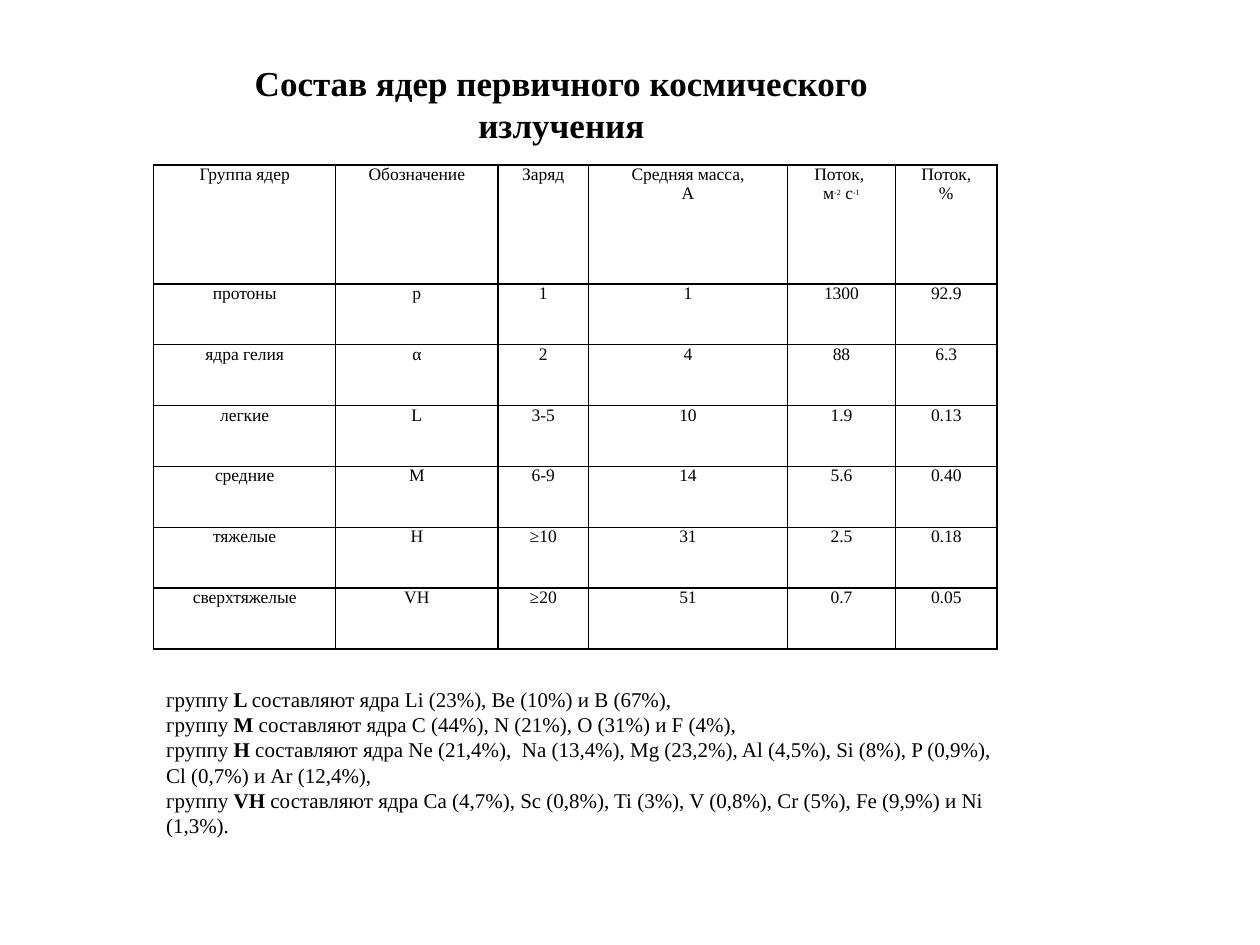
from lxml.etree import SubElement
from pptx import Presentation
from pptx.dml.color import RGBColor
from pptx.enum.text import MSO_ANCHOR, MSO_AUTO_SIZE, PP_ALIGN
from pptx.oxml.ns import qn
from pptx.util import Pt

FONT = "Times New Roman"
BLACK = "000000"

TITLE = "Состав ядер первичного космического излучения"
HEADERS = ["Группа ядер", "Обозначение", "Заряд", "Средняя масса,\nA",
           "Поток, \nм^-2^ с^-1", "Поток,\n%"]
NUCLEI = [
    ["протоны", "p", "1", "1", "1300", "92.9"],
    ["ядра гелия", "α", "2", "4", "88", "6.3"],
    ["легкие", "L", "3-5", "10", "1.9", "0.13"],
    ["средние", "M", "6-9", "14", "5.6", "0.40"],
    ["тяжелые", "H", "≥10", "31", "2.5", "0.18"],
    ["сверхтяжелые", "VH", "≥20", "51", "0.7", "0.05"],
]
GROUPS = [
    ("группу ", "L ", "составляют ядра Li (23%), Be (10%) и B (67%),"),
    ("группу ", "M ", "составляют ядра C (44%), N (21%), O (31%) и F (4%),"),
    ("группу ", "H", " составляют ядра Ne (21,4%),  Na (13,4%), Mg (23,2%), Al (4,5%), "
     "Si (8%), P (0,9%), Cl (0,7%) и Ar (12,4%),"),
    ("группу ", "VH ", "составляют ядра Ca (4,7%), Sc (0,8%), Ti (3%), V (0,8%), "
     "Cr (5%), Fe (9,9%) и Ni (1,3%)."),
]

LEFT = 87.84
TABLE_TOP = 94.32
COLUMN_WIDTHS = [103.9, 92.9, 51.6, 113.8, 61.7, 58.1]
HEADER_HEIGHT, ROW_HEIGHT = 67.9, 34.8


def color(hex_value):
    return RGBColor.from_string(hex_value)


def style(font, size, bold=False):
    font.name = FONT
    font.size = Pt(size)
    font.bold = bold
    font.color.rgb = color(BLACK)


def add_text(slide, left, top, width, height):
    frame = slide.shapes.add_textbox(Pt(left), Pt(top), Pt(width), Pt(height)).text_frame
    frame.word_wrap = True
    frame.auto_size = MSO_AUTO_SIZE.SHAPE_TO_FIT_TEXT
    return frame


def add_borders(cell):
    properties = cell._tc.get_or_add_tcPr()
    for index, side in enumerate(("lnL", "lnR", "lnT", "lnB")):
        line = properties.makeelement(qn(f"a:{side}"), {"w": str(Pt(1))})
        fill = SubElement(line, qn("a:solidFill"))
        SubElement(fill, qn("a:srgbClr"), val=BLACK)
        properties.insert(index, line)


def fill_cell(cell, content):
    cell.fill.background()
    cell.margin_left = cell.margin_right = Pt(5)
    cell.margin_top = cell.margin_bottom = 0
    cell.vertical_anchor = MSO_ANCHOR.TOP
    cell.text_frame.text = content.replace("^", "")
    for paragraph, text in zip(cell.text_frame.paragraphs, content.split("\n")):
        paragraph.alignment = PP_ALIGN.CENTER
        pieces = text.split("^")
        paragraph.runs[0].text = pieces[0]
        for piece in pieces[1:]:
            paragraph.add_run().text = piece
        for index, run in enumerate(paragraph.runs):
            raised = index % 2 == 1
            style(run.font, 8 if raised else 10)
            if raised:
                run._r.get_or_add_rPr().set("baseline", "30000")
    add_borders(cell)


def add_nuclei_table(slide):
    rows = [HEADERS] + NUCLEI
    heights = [HEADER_HEIGHT] + [ROW_HEIGHT] * len(NUCLEI)
    table = slide.shapes.add_table(
        len(rows), len(HEADERS), Pt(LEFT), Pt(TABLE_TOP),
        Pt(sum(COLUMN_WIDTHS)), Pt(sum(heights))).table
    table.first_row = table.horz_banding = False
    for column, width in zip(table.columns, COLUMN_WIDTHS):
        column.width = Pt(width)
    for row, height, values in zip(table.rows, heights, rows):
        row.height = Pt(height)
        for cell, value in zip(row.cells, values):
            fill_cell(cell, value)


def main():
    deck = Presentation()
    deck.slide_width, deck.slide_height = Pt(720), Pt(540)
    slide = deck.slides.add_slide(deck.slide_layouts[6])

    add_nuclei_table(slide)

    title = add_text(slide, 110.9, 31.7, 419.8, 55.4)
    title.text = TITLE
    title.paragraphs[0].alignment = PP_ALIGN.CENTER
    style(title.paragraphs[0].runs[0].font, 20, True)

    composition = add_text(slide, LEFT, 388.8, 493.2, 108.7)
    for number, pieces in enumerate(GROUPS):
        paragraph = composition.add_paragraph() if number else composition.paragraphs[0]
        for index, piece in enumerate(pieces):
            run = paragraph.add_run()
            run.text = piece
            style(run.font, 12, index == 1)

    deck.save("out.pptx")


if __name__ == "__main__":
    main()
